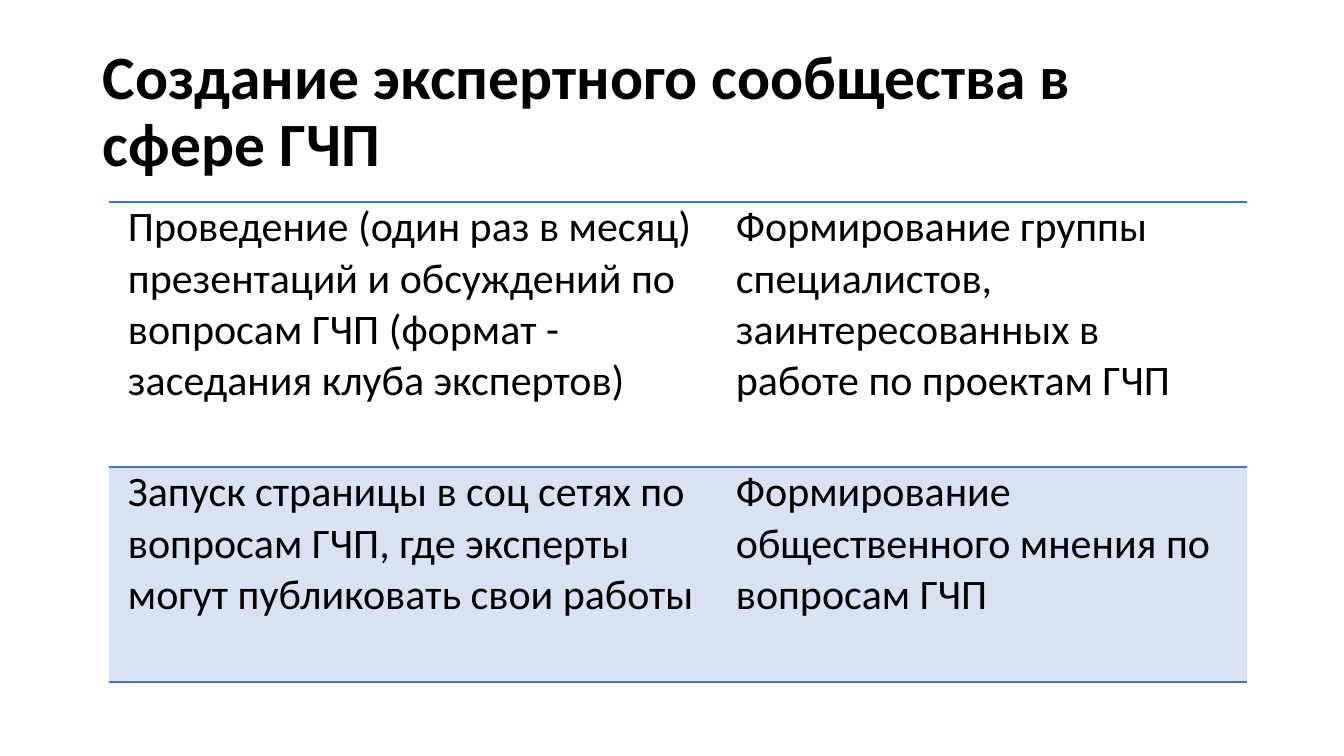
from lxml.etree import SubElement
from pptx import Presentation
from pptx.dml.color import RGBColor
from pptx.enum.text import MSO_ANCHOR
from pptx.oxml import parse_xml
from pptx.oxml.ns import nsdecls, qn
from pptx.util import Pt

PX = 914400 / 100.8
COLORS = {"text": "000000", "accent": "4472C4", "page": "FFFFFF"}


def px(n):
    return round(n * PX)


def write(tf, text, size, bold=False, spacing=1.0, anchor=MSO_ANCHOR.TOP):
    tf.word_wrap = True
    tf.vertical_anchor = anchor
    p = tf.paragraphs[0]
    p.line_spacing = spacing
    r = p.add_run()
    r.text = text
    r.font.name = "Calibri"
    r.font.size = Pt(size)
    r.font.bold = bold
    r.font.color.rgb = RGBColor.from_string(COLORS["text"])


prs = Presentation()
prs.slide_width, prs.slide_height = px(1344), px(756)
s = prs.slides.add_slide(prs.slide_layouts[6])
s.background.fill.solid()
s.background.fill.fore_color.rgb = RGBColor.from_string(COLORS["page"])

# Title
sp = s.shapes.add_textbox(px(93), px(40), px(1159), px(146))
write(sp.text_frame, "Создание экспертного сообщества в сфере ГЧП", 44,
      bold=True, spacing=0.9, anchor=MSO_ANCHOR.MIDDLE)

# Table
rows = [
    ("Проведение (один раз в месяц) презентаций и обсуждений по вопросам ГЧП "
     "(формат - заседания клуба экспертов)",
     "Формирование группы специалистов, заинтересованных в работе по проектам ГЧП"),
    ("Запуск страницы в соц сетях по вопросам ГЧП, где эксперты могут "
     "публиковать свои работы",
     "Формирование общественного мнения по вопросам ГЧП"),
]
widths, heights = [608, 530], [265, 215]
table = s.shapes.add_table(2, 2, px(109), px(202),
                           px(sum(widths)), px(sum(heights))).table
table.first_row = table.horz_banding = False
# Built-in style without fills or grid lines
table._tbl.tblPr.find(qn("a:tableStyleId")).text = "{2D5ABB26-0587-4C30-8999-92F81FD0307C}"
for col, width in zip(table.columns, widths):
    col.width = px(width)

for i, texts in enumerate(rows):
    table.rows[i].height = px(heights[i])
    for j, text in enumerate(texts):
        cell = table.cell(i, j)
        cell.margin_left = cell.margin_right = px(19)
        cell.margin_top = cell.margin_bottom = 0
        write(cell.text_frame, text, 30)
        tcPr = cell._tc.get_or_add_tcPr()

        # Second row is tinted with the accent at 20 % opacity
        if i == 1:
            cell.fill.solid()
            cell.fill.fore_color.rgb = RGBColor.from_string(COLORS["accent"])
            SubElement(tcPr.find(".//" + qn("a:srgbClr")), qn("a:alpha"), val="20000")
        else:
            cell.fill.background()

        # Horizontal rules above and below each row
        for k, side in enumerate(("lnT", "lnB")):
            tcPr.insert(k, parse_xml(
                f'<a:{side} {nsdecls("a")} w="{Pt(1)}"><a:solidFill>'
                f'<a:srgbClr val="{COLORS["accent"]}"/></a:solidFill></a:{side}>'))

prs.save("out.pptx")
